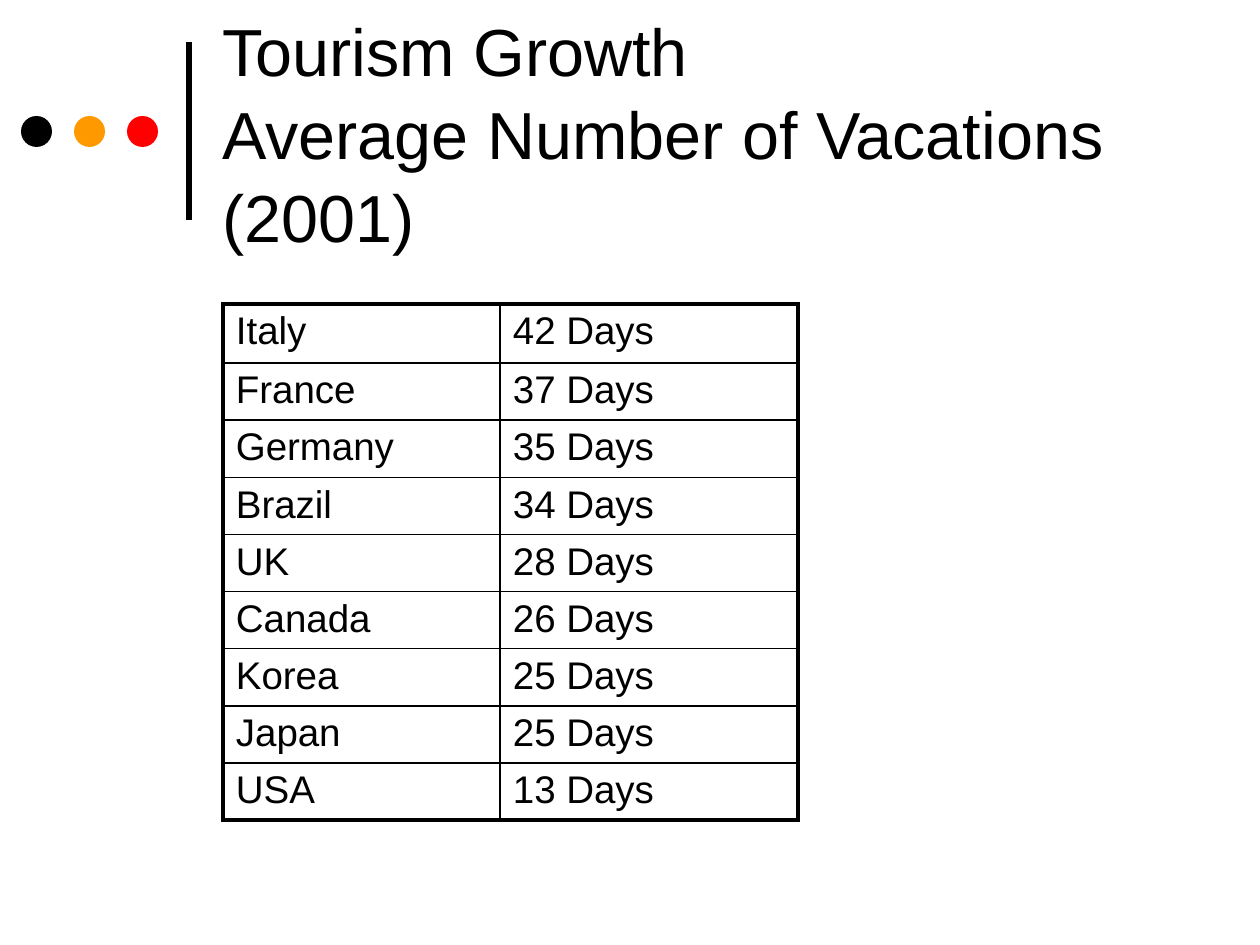
from lxml import etree
from pptx import Presentation
from pptx import util as u
from pptx.dml.color import RGBColor
from pptx.enum import shapes, text
from pptx.oxml.ns import qn

BLACK = RGBColor(0x00, 0x00, 0x00)
ORANGE = RGBColor(0xFF, 0x99, 0x00)
RED = RGBColor(0xFF, 0x00, 0x00)
FONT = "Arial"
SCALE = 914400 // 126

TITLE = "Tourism Growth\vAverage Number of Vacations (2001)"
VACATIONS = [
    ("Italy", 42), ("France", 37), ("Germany", 35),
    ("Brazil", 34), ("UK", 28), ("Canada", 26),
    ("Korea", 25), ("Japan", 25), ("USA", 13),
]
DOTS = [BLACK, ORANGE, RED]
DOT_LEFT, DOT_TOP, DOT_SIZE, DOT_STEP = 21, 116, 31, 53
TABLE_LEFT, TABLE_TOP = 223, 304
COLUMN_WIDTHS = [277, 298]
FIRST_ROW, OTHER_ROWS = 59, 446
CELL_FORMAT = {"margin_left": 13, "margin_right": 13, "margin_top": 6, "margin_bottom": 5}
OUTER_LINE, INNER_LINE = u.Pt(2.25), u.Pt(1)


def px(length):
    return u.Emu(length * SCALE)


def style_font(paragraph, size):
    for name, value in {"name": FONT, "size": u.Pt(size), "bold": False}.items():
        setattr(paragraph.font, name, value)
    paragraph.font.color.rgb = BLACK


def add_ornament(slide):
    line = slide.shapes.add_connector(
        shapes.MSO_CONNECTOR.STRAIGHT, px(189), px(220), px(189), px(42))
    line.line.width = u.Pt(3)
    line.line.color.rgb = BLACK
    etree.SubElement(line._element.spPr, qn("a:effectLst"))
    for index, color in enumerate(DOTS):
        dot = slide.shapes.add_shape(
            shapes.MSO_SHAPE.OVAL, px(DOT_LEFT + index * DOT_STEP), px(DOT_TOP),
            px(DOT_SIZE), px(DOT_SIZE))
        dot.shadow.inherit = False
        dot.fill.solid()
        dot.fill.fore_color.rgb = color
        dot.line.fill.background()


def add_title(slide):
    frame = slide.shapes.add_textbox(px(210), px(26), px(966), px(210)).text_frame
    frame.word_wrap = True
    frame.vertical_anchor = text.MSO_ANCHOR.MIDDLE
    paragraph = frame.paragraphs[0]
    paragraph.text = TITLE
    paragraph.line_spacing = 1.04
    style_font(paragraph, 38)


def set_borders(cell, widths):
    """Draw black cell borders; widths maps L, R, T and B to line widths."""
    properties = cell._tc.get_or_add_tcPr()
    for index, (side, width) in enumerate(widths.items()):
        border = etree.Element(qn(f"a:ln{side}"), w=str(int(width)))
        fill = etree.SubElement(border, qn("a:solidFill"))
        etree.SubElement(fill, qn("a:srgbClr"), val=str(BLACK))
        properties.insert(index, border)


def add_vacation_table(slide):
    row_count, column_count = len(VACATIONS), len(COLUMN_WIDTHS)
    table = slide.shapes.add_table(
        row_count, column_count, px(TABLE_LEFT), px(TABLE_TOP),
        px(sum(COLUMN_WIDTHS)), px(FIRST_ROW + OTHER_ROWS)).table
    table.first_row = table.horz_banding = False
    for column, width in zip(table.columns, COLUMN_WIDTHS):
        column.width = px(width)
    for row_index, (country, days) in enumerate(VACATIONS):
        row = table.rows[row_index]
        row.height = px(OTHER_ROWS) // (row_count - 1) if row_index else px(FIRST_ROW)
        for column_index, content in enumerate((country, f"{days} Days")):
            cell = row.cells[column_index]
            cell.text = content
            cell.fill.background()
            for name, value in CELL_FORMAT.items():
                setattr(cell, name, px(value))
            style_font(cell.text_frame.paragraphs[0], 22)
            on_edge = {
                "L": column_index == 0, "R": column_index == column_count - 1,
                "T": row_index == 0, "B": row_index == row_count - 1,
            }
            set_borders(cell, {side: OUTER_LINE if outer else INNER_LINE
                               for side, outer in on_edge.items()})


def main():
    presentation = Presentation()
    presentation.slide_width, presentation.slide_height = px(1260), px(945)
    slide = presentation.slides.add_slide(presentation.slide_layouts[6])
    add_ornament(slide)
    add_title(slide)
    add_vacation_table(slide)
    presentation.save("out.pptx")


if __name__ == "__main__":
    main()
